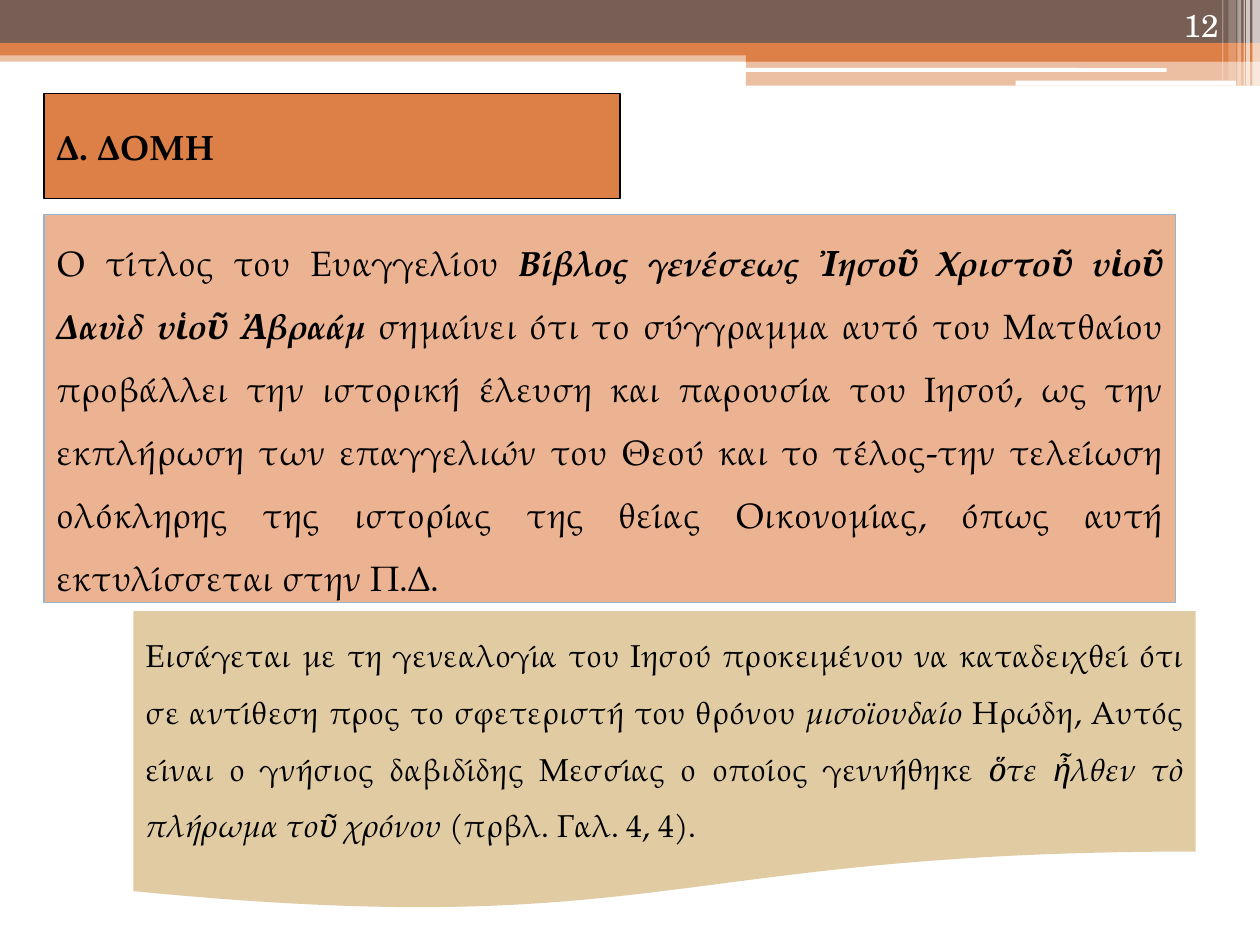
from dataclasses import dataclass

from lxml import etree
from pptx import Presentation
from pptx.dml.color import RGBColor
from pptx.enum.shapes import MSO_SHAPE
from pptx.enum.text import MSO_ANCHOR, MSO_AUTO_SIZE, PP_ALIGN
from pptx.oxml.ns import qn
from pptx.util import Inches, Pt

RECT = MSO_SHAPE.RECTANGLE
ROUND = MSO_SHAPE.ROUNDED_RECTANGLE
DOCUMENT = MSO_SHAPE.FLOWCHART_DOCUMENT
LEFT, RIGHT, JUSTIFY = PP_ALIGN.LEFT, PP_ALIGN.RIGHT, PP_ALIGN.JUSTIFY
TOP, MIDDLE, BOTTOM = MSO_ANCHOR.TOP, MSO_ANCHOR.MIDDLE, MSO_ANCHOR.BOTTOM
GROW = MSO_AUTO_SIZE.SHAPE_TO_FIT_TEXT
COLS, ROWS = 100, 75
CELL = Inches(0.1)


@dataclass(frozen=True)
class Theme:
    body_font: str = "TeX Gyre Pagella"
    number_font: str = "TeX Gyre Schola"
    large: int = 20
    small: int = 18
    line: float = 0.75
    brown: str = "775F55"
    orange: str = "DD8047"
    peach: str = "EBB391"
    sand: str = "E0CBA3"
    blue: str = "94B6D2"
    black: str = "000000"
    white: str = "FFFFFF"


THEME = Theme()

BANDS = [
    ((0, 4, COLS, 0.9), THEME.orange, 50),
    ((0, 0, COLS, 3.4), THEME.brown, 100),
    ((0, 3.4, COLS, 1), THEME.orange, 100),
    ((59.2, 3.9, 40.8, 1), THEME.orange, 100),
    ((59.2, 4.8, 40.8, 2), THEME.orange, 50),
]
BARS = [(59.1, 5.4, 33.5, 0.3), (80.6, 6.4, 17.5, 0.4)]
STRIPES = [
    (99.4, 0.6, 6.8, 65),
    (98.9, 0.3, 6.8, 65),
    (98.7, 0.1, 6.8, 60),
    (98.2, 0.3, 6.8, 40),
    (97.5, 0.6, 6.4, 20),
    (97, 0.1, 6.4, 30),
]

GOSPEL_TITLE = [
    ("Ο τίτλος του Ευαγγελίου ", False, False),
    ("Βίβλος γενέσεως Ἰησοῦ Χριστοῦ υἱοῦ Δαυὶδ υἱοῦ Ἀβραάμ", True, True),
    (" σημαίνει ότι το σύγγραμμα αυτό του Ματθαίου προβάλλει την ιστορική "
     "έλευση και παρουσία του Ιησού, ως την εκπλήρωση των επαγγελιών του Θεού "
     "και το τέλος-την τελείωση ολόκληρης της ιστορίας της θείας Οικονομίας, "
     "όπως αυτή εκτυλίσσεται στην Π.Δ.", False, False),
]
GENEALOGY = [
    ("Εισάγεται με τη γενεαλογία του Ιησού προκειμένου να καταδειχθεί ότι σε "
     "αντίθεση προς το σφετεριστή του θρόνου ", False, False),
    ("μισοϊουδαίο", False, True),
    (" Ηρώδη, Αυτός είναι ο γνήσιος δαβιδίδης Μεσσίας ο οποίος γεννήθηκε ",
     False, False),
    ("ὅτε ἦλθεν τὸ πλήρωμα τοῦ χρόνου", False, True),
    (" (πρβλ. Γαλ. 4, 4).", False, False),
]


def cells(at):
    return [round(n * CELL) for n in at]


def paint(sp, fill, line=None, opacity=100):
    sp.fill.solid()
    sp.fill.fore_color.rgb = RGBColor.from_string(fill)
    if opacity < 100:
        color = sp._element.spPr.find(".//" + qn("a:srgbClr"))
        etree.SubElement(color, qn("a:alpha"), val=str(opacity * 1000))
    if line:
        sp.line.color.rgb = RGBColor.from_string(line)
        sp.line.width = Pt(THEME.line)
    else:
        sp.line.fill.background()


def add_block(s, kind, at, fill, line=None, opacity=100):
    sp = s.shapes.add_shape(kind, *cells(at))
    sp.shadow.inherit = False
    paint(sp, fill, line, opacity)
    return sp


def write(sp, runs, size, align, anchor, font=THEME.body_font,
          color=THEME.black, spacing=1.0):
    tf = sp.text_frame
    tf.word_wrap = True
    tf.vertical_anchor = anchor
    p = tf.paragraphs[0]
    p.alignment = align
    p.line_spacing = spacing
    p.font.name = font
    p.font.size = Pt(size)
    p.font.color.rgb = RGBColor.from_string(color)
    for text, bold, italic in runs:
        r = p.add_run()
        r.text = text
        r.font.bold = bold
        r.font.italic = italic


def add_banner(s):
    for at, fill, opacity in BANDS:
        add_block(s, RECT, at, fill, opacity=opacity)
    for at in BARS:
        add_block(s, ROUND, at, THEME.white)
    for left, width, height, opacity in STRIPES:
        add_block(s, RECT, (left, 0, width, height), THEME.white, opacity=opacity)


def add_title(s, text, at):
    sp = s.shapes.title
    sp.left, sp.top, sp.width, sp.height = cells(at)
    geom = etree.SubElement(sp._element.spPr, qn("a:prstGeom"), prst="roundRect")
    etree.SubElement(geom, qn("a:avLst"))
    paint(sp, THEME.orange, THEME.black)
    write(sp, [(text, True, False)], THEME.large, LEFT, MIDDLE)
    sp.text_frame.auto_size = GROW


def add_passage(s, kind, at, fill, runs, size, line=None):
    sp = add_block(s, kind, at, fill, line)
    write(sp, runs, size, JUSTIFY, TOP, spacing=1.5)
    sp.text_frame.auto_size = GROW


def add_page_number(s, text, at):
    sp = s.shapes.add_textbox(*cells(at))
    write(sp, [(text, False, False)], THEME.small, RIGHT, BOTTOM,
          THEME.number_font, THEME.white)


def main():
    prs = Presentation()
    prs.slide_width, prs.slide_height = COLS * CELL, ROWS * CELL
    s = prs.slides.add_slide(prs.slide_layouts[5])
    add_banner(s)
    add_title(s, "Δ. ΔΟΜΗ", (3.5, 9.2, 45.7, 4.8))
    add_passage(s, RECT, (3.5, 17, 89.8, 30.8), THEME.peach,
                GOSPEL_TITLE, THEME.large, THEME.blue)
    add_passage(s, DOCUMENT, (10.6, 48.5, 84.3, 23.8), THEME.sand,
                GENEALOGY, THEME.small)
    add_page_number(s, "12", (89.4, 0, 8.3, 4))
    prs.save("out.pptx")


if __name__ == "__main__":
    main()
